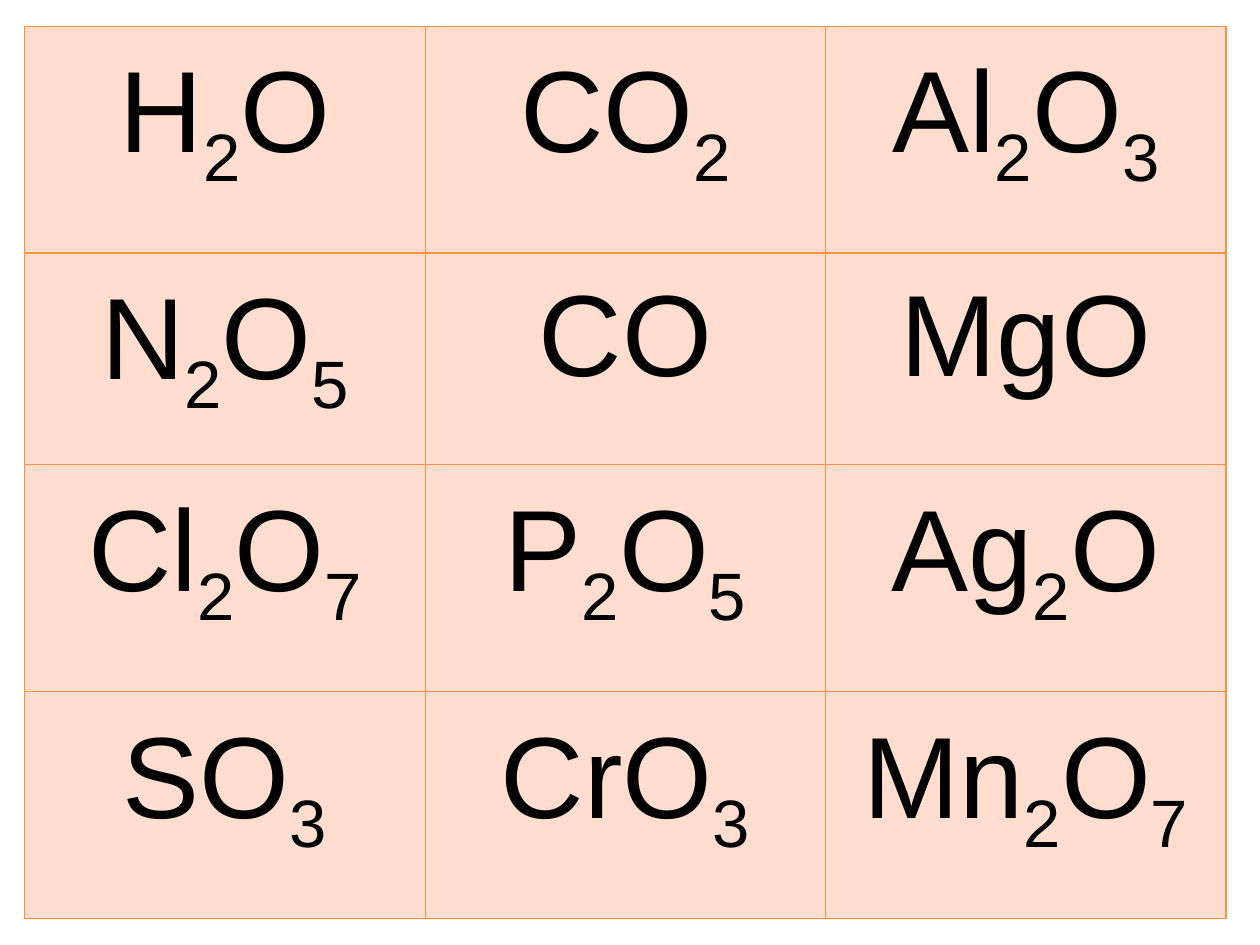
from itertools import groupby

from lxml import etree
from pptx import Presentation
from pptx import util as u
from pptx.dml.color import RGBColor
from pptx.enum import text
from pptx.oxml.ns import qn

# Content: digits in a formula are set as subscripts
OXIDES = [
    ["H2O", "CO2", "Al2O3"],
    ["N2O5", "CO", "MgO"],
    ["Cl2O7", "P2O5", "Ag2O"],
    ["SO3", "CrO3", "Mn2O7"],
]
THEME = {"font": "Arial", "size": 66, "ink": "000000",
         "fill": "FFDED0", "border": "F69240"}
LEFT, TOP = 14.2, 15
COL_WIDTHS = [228.8] * 3
ROW_HEIGHTS = [129.6, 121, 129.6, 129.6]


def add_formula(tf, formula, font, size, color, spacing=1.15):
    p = tf.paragraphs[0]
    p.alignment = text.PP_ALIGN.CENTER
    p.line_spacing = spacing
    for is_digit, chars in groupby(formula, str.isdigit):
        r = p.add_run()
        r.text = "".join(chars)
        r.font.name = font
        r.font.size = u.Pt(size)
        r.font.color.rgb = RGBColor.from_string(color)
        if is_digit:
            r.font._element.set("baseline", "-25000")


def add_borders(cell, color, width=0.75):
    tc_pr = cell._tc.get_or_add_tcPr()
    for side in ("a:lnL", "a:lnR", "a:lnT", "a:lnB"):
        ln = etree.SubElement(tc_pr, qn(side), w=str(u.Pt(width)))
        fill = etree.SubElement(ln, qn("a:solidFill"))
        etree.SubElement(fill, qn("a:srgbClr"), val=color)


prs = Presentation()
prs.slide_width, prs.slide_height = u.Pt(720), u.Pt(540)
s = prs.slides.add_slide(prs.slide_layouts[6])

# Table grid
table = s.shapes.add_table(
    len(ROW_HEIGHTS), len(COL_WIDTHS), u.Pt(LEFT), u.Pt(TOP),
    u.Pt(sum(COL_WIDTHS)), u.Pt(sum(ROW_HEIGHTS))).table
table.first_row = table.horz_banding = False
for col, width in zip(table.columns, COL_WIDTHS):
    col.width = u.Pt(width)
for row, height in zip(table.rows, ROW_HEIGHTS):
    row.height = u.Pt(height)

# Formula cells
for row, formulas in zip(table.rows, OXIDES):
    for cell, formula in zip(row.cells, formulas):
        cell.margin_left = cell.margin_right = u.Pt(1.5)
        cell.margin_top = cell.margin_bottom = 0
        add_borders(cell, THEME["border"])
        cell.fill.solid()
        cell.fill.fore_color.rgb = RGBColor.from_string(THEME["fill"])
        add_formula(cell.text_frame, formula, font=THEME["font"],
                    size=THEME["size"], color=THEME["ink"])

prs.save("out.pptx")
